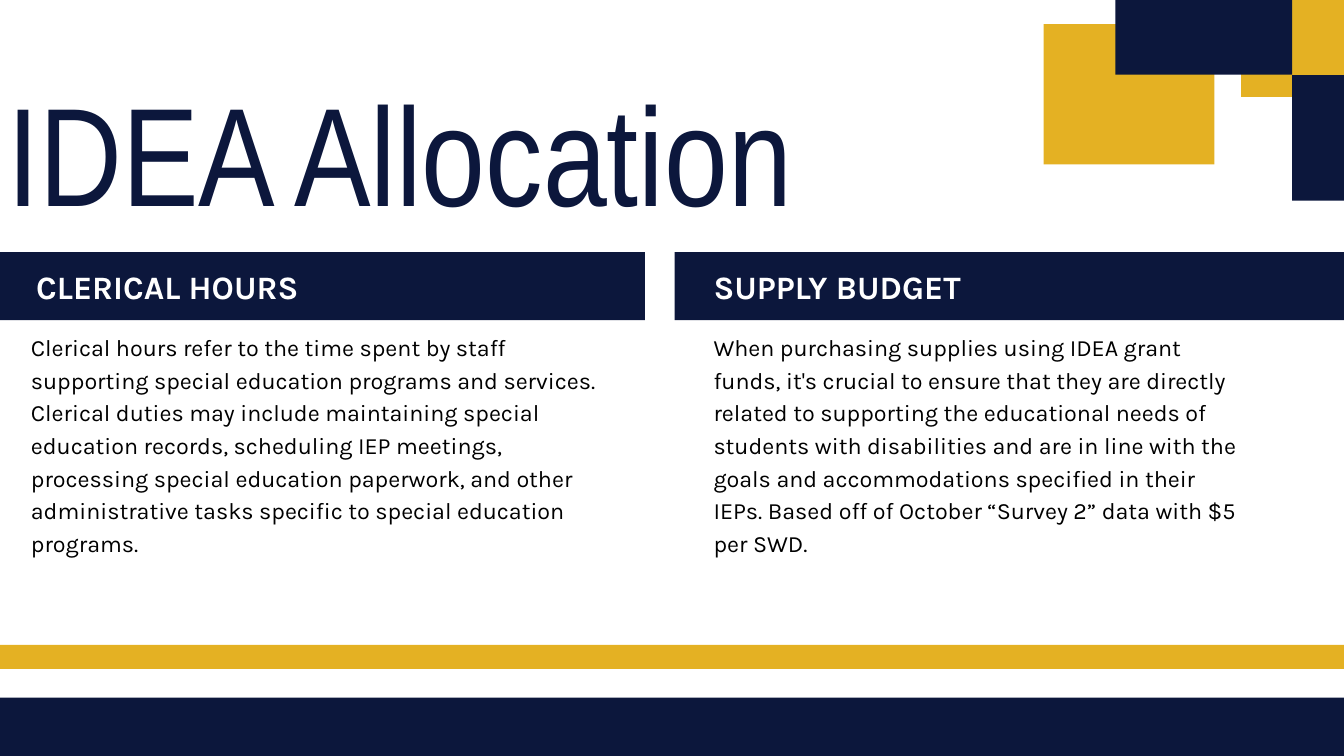
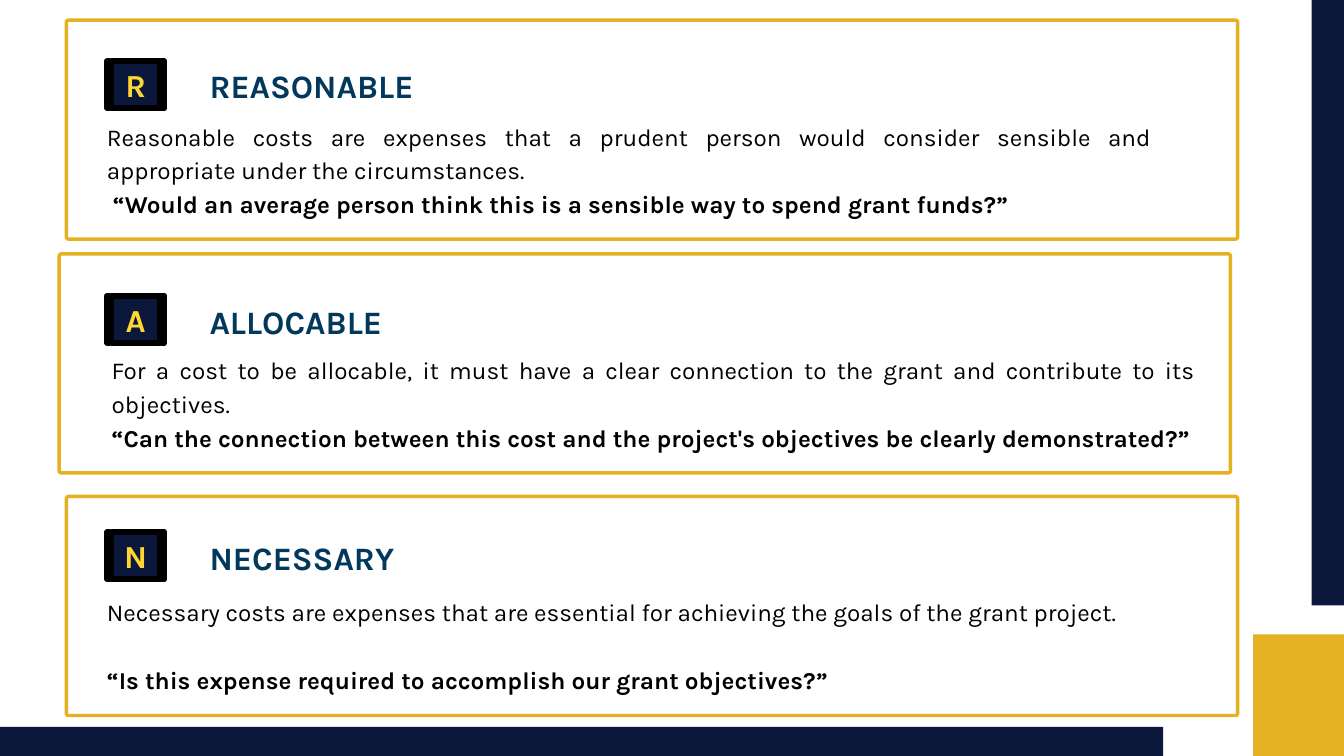
"""Build two slides on the grant allocation and the tests an expense must pass."""
from pptx import Presentation
from pptx.dml.color import RGBColor
from pptx.enum import shapes, text
from pptx.util import Cm, Pt

NAVY = RGBColor(0x0C, 0x17, 0x3C)
GOLD = RGBColor(0xE4, 0xB1, 0x23)
YELLOW = RGBColor(0xFF, 0xD6, 0x32)
BLUE = RGBColor(0x02, 0x38, 0x5B)
BLACK = RGBColor(0, 0, 0)
WHITE = RGBColor(0xFF, 0xFF, 0xFF)
BODY_FONT, TITLE_FONT = "Karla", "Arial Narrow"
LEADING = 1.4
LEFT, CENTER, JUSTIFY = text.PP_ALIGN.LEFT, text.PP_ALIGN.CENTER, text.PP_ALIGN.JUSTIFY
RECTANGLE = shapes.MSO_SHAPE.RECTANGLE
ROUNDED = shapes.MSO_SHAPE.ROUNDED_RECTANGLE
WIDTH, HEIGHT = 50.8, 28.58

TITLE = "IDEA Allocation"
COLUMNS = [
    {"heading": "CLERICAL HOURS", "band": (0, 24.38), "heading_left": 1.37,
     "body_left": 1.17, "body_width": 22.33,
     "body": "Clerical hours refer to the time spent by staff supporting special education "
             "programs and services. Clerical duties may include maintaining special education "
             "records, scheduling IEP meetings, processing special education paperwork, and "
             "other administrative tasks specific to special education programs."},
    {"heading": "SUPPLY BUDGET", "band": (25.5, 25.3), "heading_left": 26.97,
     "body_left": 26.97, "body_width": 19.91,
     "body": "When purchasing supplies using IDEA grant funds, it's crucial to ensure that they "
             "are directly related to supporting the educational needs of students with "
             "disabilities and are in line with the goals and accommodations specified in their "
             "IEPs. Based off of October “Survey 2” data with $5 per SWD."},
]
CARDS = [
    {"heading": "REASONABLE", "frame": (2.51, 0.76), "badge_top": 2.31, "heading_top": 2.24,
     "body_box": (4.04, 4.42, 39.52, 3.81), "quote_indent": 0.23, "quote_gap": 0,
     "body": "Reasonable costs are expenses that a prudent person would consider sensible and "
             "appropriate under the circumstances.",
     "quote": "“Would an average person think this is a sensible way to spend grant funds?”"},
    {"heading": "ALLOCABLE", "frame": (2.24, 9.6), "badge_top": 11.18, "heading_top": 11.15,
     "body_box": (4.22, 13.26, 41, 5.08), "quote_indent": 0, "quote_gap": 0,
     "body": "For a cost to be allocable, it must have a clear connection to the grant and "
             "contribute to its objectives.",
     "quote": "“Can the connection between this cost and the project's objectives be clearly "
              "demonstrated?”"},
    {"heading": "NECESSARY", "frame": (2.51, 18.77), "badge_top": 20.12, "heading_top": 20.07,
     "body_box": (4.04, 22.4, 39.52, 3.81), "quote_indent": 0, "quote_gap": 36.4,
     "body": "Necessary costs are expenses that are essential for achieving the goals of the "
             "grant project.",
     "quote": "“Is this expense required to accomplish our grant objectives?”"},
]
ALLOCATION_BLOCKS = [
    (GOLD, (46.91, 0, 3.89, 3.66)),
    (GOLD, (39.45, 0.91, 6.45, 5.31)),
    (NAVY, (48.84, 2.84, 1.96, 4.75)),
    (NAVY, (42.16, 0, 6.68, 2.82)),
    (NAVY, (0, 26.37, WIDTH, 2.21)),
    (GOLD, (0, 24.38, WIDTH, 0.91)),
]
TEST_BLOCKS = [
    (NAVY, (0, 27.48, 43.97, 1.1)),
    (NAVY, (49.58, 0, 1.22, 22.89)),
    (GOLD, (47.37, 23.98, 3.43, 4.6)),
]
BADGE_PARTS = [(4.22, 1.83), (4.04, 0.1), (6.12, 0.1)]


def add_block(page, box, fill=None, line=None, line_width=0, kind=RECTANGLE):
    """Draw a preset shape with an optional fill and outline."""
    block = page.shapes.add_shape(kind, *map(Cm, box))
    block.shadow.inherit = False
    if fill is None:
        block.fill.background()
    else:
        block.fill.solid()
        block.fill.fore_color.rgb = fill
    if line is None:
        block.line.fill.background()
    else:
        block.line.color.rgb = line
        block.line.width = Pt(line_width)
    return block


def add_blocks(page, blocks):
    """Draw the plain coloured blocks that decorate a slide."""
    for color, box in blocks:
        add_block(page, box, color)


def prepare_frame(frame):
    """Give a text frame no margins, wrapping and top alignment."""
    frame.margin_left = frame.margin_right = frame.margin_top = frame.margin_bottom = 0
    frame.word_wrap = True
    frame.auto_size = text.MSO_AUTO_SIZE.NONE
    frame.vertical_anchor = text.MSO_ANCHOR.TOP


def style(para, size, color, bold=False, align=LEFT, font=BODY_FONT):
    """Set the font, alignment and line spacing of a paragraph."""
    para.alignment = align
    para.line_spacing = Pt(round(size * LEADING, 1))
    para.font.name = font
    para.font.size = Pt(size)
    para.font.bold = bold
    para.font.color.rgb = color


def add_text(page, box, words, *look):
    """Add a one-paragraph text box and return its frame."""
    frame = page.shapes.add_textbox(*map(Cm, box)).text_frame
    prepare_frame(frame)
    frame.text = words
    style(frame.paragraphs[0], *look)
    return frame


def add_column(page, column):
    """Draw a headed column of text."""
    band_left, band_width = column["band"]
    add_block(page, (band_left, 9.53, band_width, 2.57), NAVY)
    add_text(page, (column["heading_left"], 9.86, 18, 1.68), column["heading"],
             35, WHITE, True, JUSTIFY)
    add_text(page, (column["body_left"], 12.42, column["body_width"], 8.53), column["body"],
             25, BLACK)


def add_card(page, card):
    """Draw a framed test with its initial, heading, meaning and question."""
    frame = add_block(page, (*card["frame"], 44.27, 8.28), None, GOLD, 3.75, ROUNDED)
    frame.adjustments[0] = 0.01
    top = card["badge_top"]
    for left, width in BADGE_PARTS:
        add_block(page, (left, top, width, 1.78), NAVY, BLACK, 6)
    add_text(page, (4.37, top - 0.08, 1.52, 1.68), card["heading"][0], 34.4, YELLOW, True, CENTER)
    add_text(page, (7.92, card["heading_top"], 22.58, 1.68), card["heading"], 35, BLUE, True)
    body = add_text(page, card["body_box"], card["body"], 26, BLACK, False, JUSTIFY)
    quote = body.add_paragraph()
    quote.text = card["quote"]
    style(quote, 26, BLACK, True, JUSTIFY)
    quote.space_before = Pt(card["quote_gap"])
    quote._p.get_or_add_pPr().set("marL", str(int(Cm(card["quote_indent"]))))


def build_allocation(deck):
    """Build the slide with the title and two columns."""
    page = deck.slides.add_slide(deck.slide_layouts[5])
    title = page.shapes.title
    title.left, title.top, title.width, title.height = map(Cm, (0.28, 1.47, 35.59, 7.11))
    prepare_frame(title.text_frame)
    title.text_frame.text = TITLE
    style(title.text_frame.paragraphs[0], 150, NAVY, font=TITLE_FONT)
    for column in COLUMNS:
        add_column(page, column)
    add_blocks(page, ALLOCATION_BLOCKS)


def build_tests(deck):
    """Build the slide with the three expense tests."""
    page = deck.slides.add_slide(deck.slide_layouts[6])
    add_blocks(page, TEST_BLOCKS)
    for card in CARDS:
        add_card(page, card)


def main():
    """Build and save the deck."""
    deck = Presentation()
    deck.slide_width, deck.slide_height = Cm(WIDTH), Cm(HEIGHT)
    build_allocation(deck)
    build_tests(deck)
    deck.save("out.pptx")


if __name__ == "__main__":
    main()
